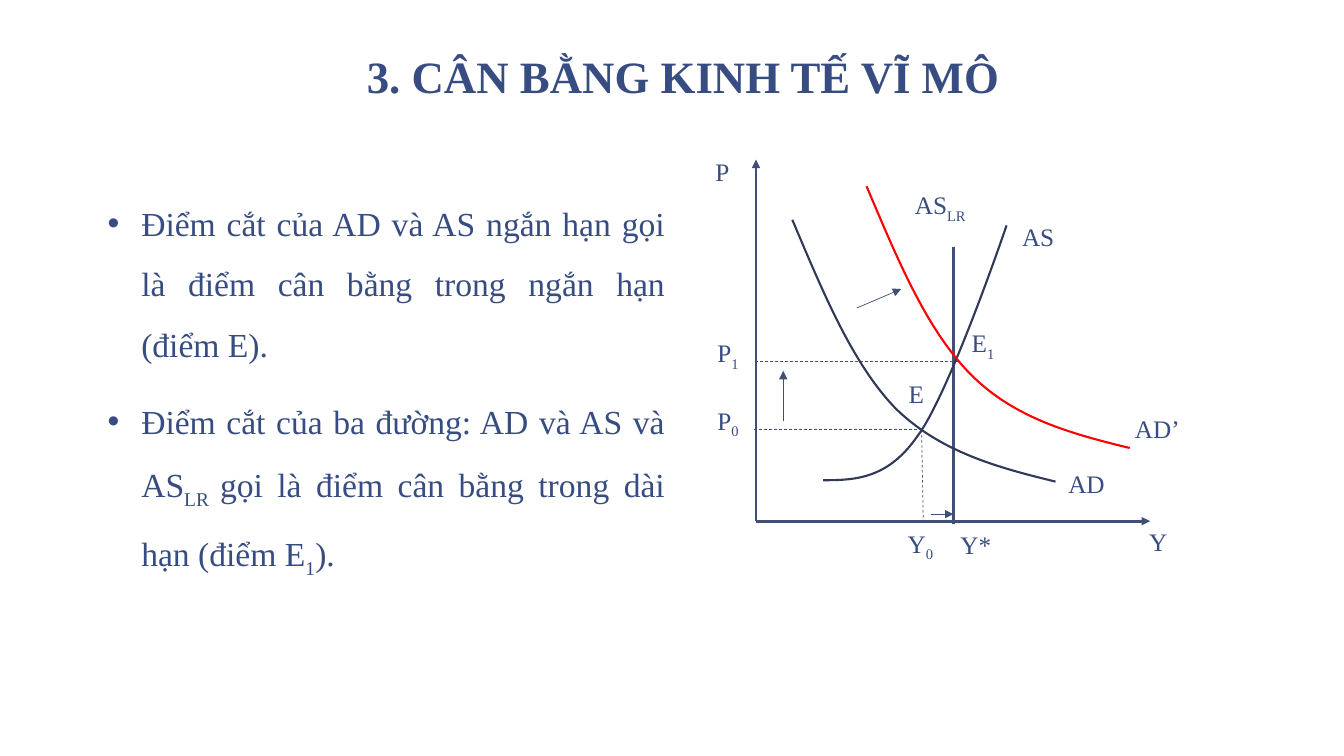
from lxml import etree
from pptx import Presentation
from pptx.dml.color import RGBColor
from pptx.enum import dml, shapes, text
from pptx.oxml import ns
from pptx.util import Pt

FONT = "Times New Roman"
INK, AXIS, CURVE, SHIFTED = "374C81", "414E77", "303A58", "FF0000"

HEADING = "3. CÂN BẰNG KINH TẾ VĨ MÔ"
HEADING_BOX = (88, 6, 800, 72)
POINTS_BOX = (67.5, 125.5, 417, 278.5)
POINTS = [
    [("Điểm cắt của AD và AS ngắn hạn gọi là điểm cân bằng trong ngắn hạn (điểm E).", False)],
    [("Điểm cắt của ba đường: AD và AS và AS", False), ("LR ", True),
     ("gọi là điểm cân bằng trong dài hạn (điểm E", False), ("1", True), (").", False)],
]

ORIGIN = (540, 372.25)
LINES = [
    (ORIGIN, (540, 114), 2, False, True),
    (ORIGIN, (821.5, 372.25), 2, False, True),
    ((681, 176.5), (681, 374.5), 2, False, False),
    ((658.3, 307), (659.5, 372.25), 0.5, True, False),
    ((658.8, 307), (538.8, 307), 0.5, True, False),
    ((684, 258), (540, 258), 0.5, True, False),
    ((612, 220), (643.7, 206.5), 0.5, False, True),
    ((559.5, 301), (559.5, 265), 0.5, False, True),
    ((664.8, 367.2), (681, 367.2), 0.5, False, True),
]

DEMAND = [(566, 157), (587.6, 208.6), (609.2, 260.4), (640.5, 291.7),
          (671.8, 323), (712.8, 334), (753.8, 344.4)]
SUPPLY = [(587.8, 342.6), (610.6, 342.6), (633.6, 342), (655.4, 311.8),
          (677.5, 281.5), (719, 160.7), (719, 160.7)]
DEMAND_SHIFT = (53.2, -24)
CURVES = [
    (DEMAND, CURVE),
    (SUPPLY, CURVE),
    ([(x + DEMAND_SHIFT[0], y + DEMAND_SHIFT[1]) for x, y in DEMAND], SHIFTED),
]

LABEL_HEIGHT = 29
LABELS = [
    ("P", "", 504, 108, 36), ("Y", "", 813.8, 372.3, 36),
    ("Y*", "", 679, 374.7, 47), ("Y", "0", 641.3, 373.8, 47),
    ("P", "0", 505.3, 285.7, 36), ("P", "1", 505.3, 237.6, 36),
    ("AS", "LR", 646.4, 132, 72), ("AD", "", 756, 330.8, 50),
    ("AD’", "", 803.6, 292, 65), ("AS", "", 723, 154.2, 50),
    ("E", "", 642, 266.4, 36), ("E", "1", 687, 230.4, 45),
]


def rgb(color):
    return RGBColor.from_string(color)


def set_all(target, **values):
    for key, value in values.items():
        setattr(target, key, value)


def write(paragraph, runs, size, bold=False):
    for words, subscript in runs:
        run = paragraph.add_run()
        run.text = words
        set_all(run.font, name=FONT, size=Pt(size), bold=bold)
        run.font.color.rgb = rgb(INK)
        if subscript:
            run.font._element.set("baseline", "-25000")


def add_text_box(slide, box):
    frame = slide.shapes.add_textbox(*map(Pt, box)).text_frame
    set_all(frame, word_wrap=True, auto_size=text.MSO_AUTO_SIZE.SHAPE_TO_FIT_TEXT)
    return frame


def add_heading(slide):
    heading = slide.shapes.title
    left, top, width, height = map(Pt, HEADING_BOX)
    set_all(heading, left=left, top=top, width=width, height=height)
    set_all(heading.text_frame, word_wrap=True, auto_size=text.MSO_AUTO_SIZE.NONE,
            vertical_anchor=text.MSO_ANCHOR.BOTTOM,
            margin_left=Pt(9.4), margin_right=Pt(9.4), margin_top=Pt(5), margin_bottom=Pt(5))
    paragraph = heading.text_frame.paragraphs[0]
    set_all(paragraph, alignment=text.PP_ALIGN.CENTER, line_spacing=0.85)
    write(paragraph, [(HEADING, False)], 32, bold=True)


def add_points(slide):
    frame = add_text_box(slide, POINTS_BOX)
    set_all(frame, margin_left=Pt(9.4), margin_right=Pt(9.4),
            margin_top=Pt(5), margin_bottom=Pt(5))
    for index, runs in enumerate(POINTS):
        paragraph = frame.add_paragraph() if index else frame.paragraphs[0]
        set_all(paragraph, alignment=text.PP_ALIGN.JUSTIFY, line_spacing=1.5,
                space_before=Pt(12 if index else 0))
        properties = paragraph._p.get_or_add_pPr()
        properties.set("marL", str(Pt(24)))
        properties.set("indent", str(Pt(-24)))
        etree.SubElement(properties, ns.qn("a:buFont"), typeface="Arial")
        etree.SubElement(properties, ns.qn("a:buChar"), char="•")
        write(paragraph, runs, 24)


def add_line(slide, start, end, width, dashed, arrow):
    line = slide.shapes.add_connector(
        shapes.MSO_CONNECTOR.STRAIGHT, *map(Pt, start + end))
    line.line.color.rgb = rgb(AXIS)
    line.line.width = Pt(width)
    if dashed:
        line.line.dash_style = dml.MSO_LINE.DASH
    if arrow:
        etree.SubElement(line.line._get_or_add_ln(), ns.qn("a:tailEnd"), type="triangle")
    etree.SubElement(line._element.spPr, ns.qn("a:effectLst"))


def add_curve(slide, controls, color):
    builder = slide.shapes.build_freeform(*controls[0], scale=Pt(1))
    builder.add_line_segments(controls[1:], close=False)
    curve = builder.convert_to_shape()
    curve.shadow.inherit = False
    curve.fill.background()
    curve.line.color.rgb = rgb(color)
    curve.line.width = Pt(1.5)
    segments = list(curve._element.iter(ns.qn("a:lnTo")))
    outline = segments[0].getparent()
    for first in range(0, len(segments), 3):
        bezier = etree.SubElement(outline, ns.qn("a:cubicBezTo"))
        for segment in segments[first:first + 3]:
            bezier.append(segment[0])
            outline.remove(segment)


def main():
    deck = Presentation()
    set_all(deck, slide_width=Pt(960), slide_height=Pt(540))
    slide = deck.slides.add_slide(deck.slide_layouts.get_by_name("Title Only"))
    add_heading(slide)
    for line in LINES:
        add_line(slide, *line)
    for controls, color in CURVES:
        add_curve(slide, controls, color)
    add_points(slide)
    for name, subscript, left, top, width in LABELS:
        frame = add_text_box(slide, (left, top, width, LABEL_HEIGHT))
        runs = [(name, False)] + ([(subscript, True)] if subscript else [])
        write(frame.paragraphs[0], runs, 18)
    deck.save("out.pptx")


if __name__ == "__main__":
    main()
